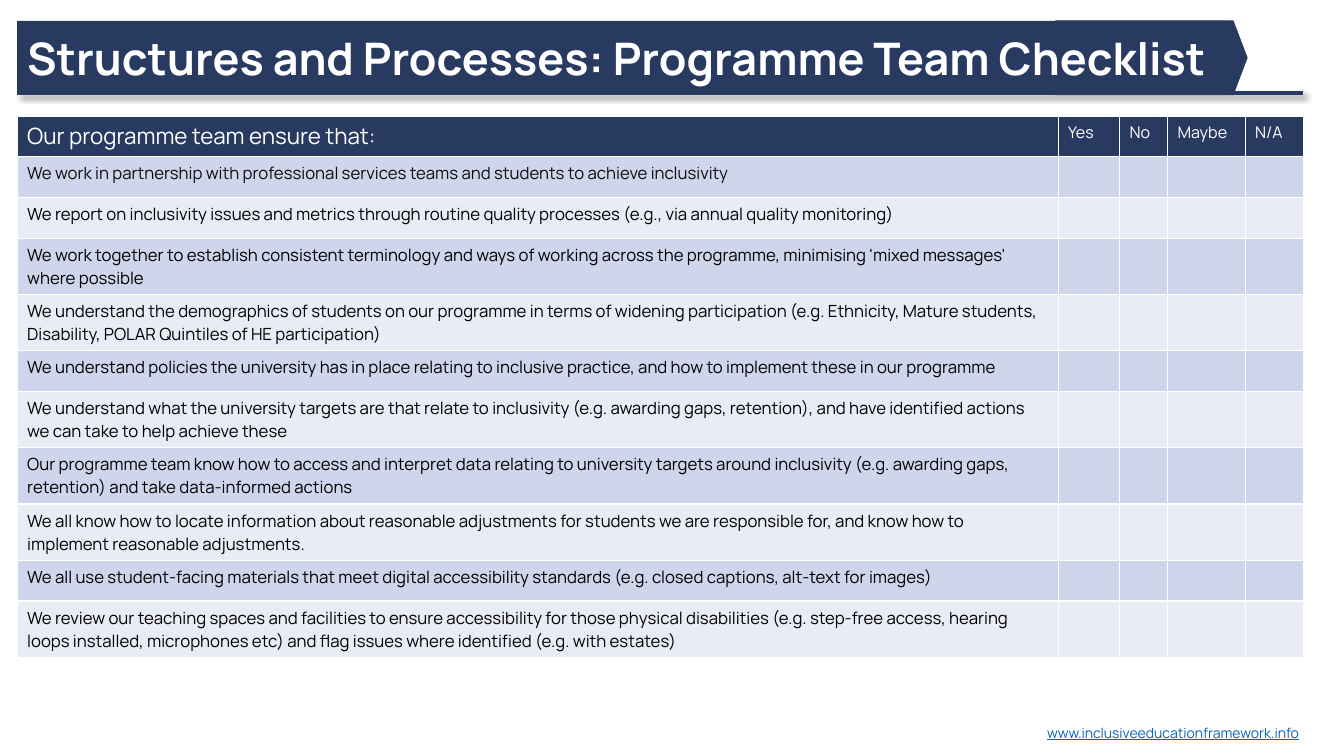
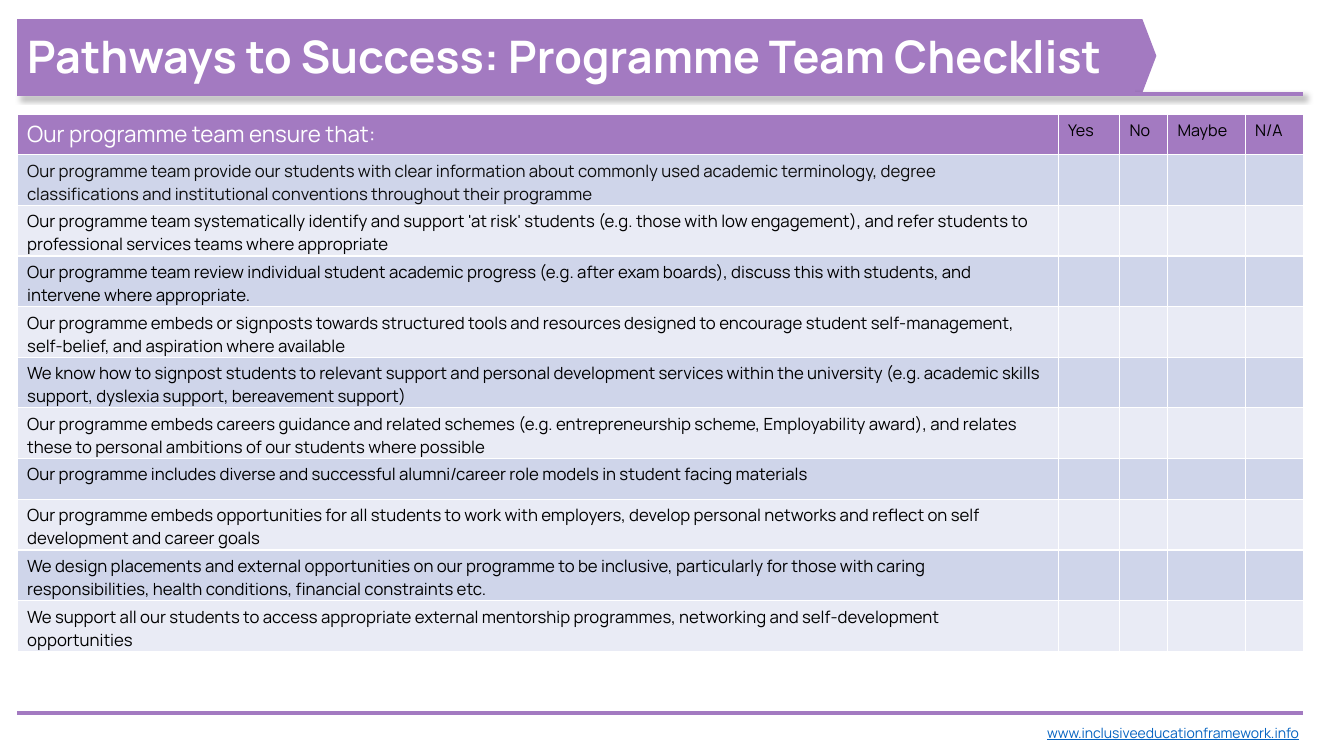
from dataclasses import dataclass

from lxml.etree import SubElement
from pptx import Presentation
from pptx.dml.color import RGBColor
from pptx.enum.shapes import MSO_CONNECTOR
from pptx.enum.text import MSO_ANCHOR, MSO_AUTO_SIZE, PP_ALIGN
from pptx.oxml.ns import qn
from pptx.slide import Slide
from pptx.util import Pt

NAVY = RGBColor(0x29, 0x3A, 0x60)
PURPLE = RGBColor(0xA3, 0x7A, 0xC1)
WHITE = RGBColor(0xFF, 0xFF, 0xFF)
BLACK = RGBColor(0x00, 0x00, 0x00)
NEAR_BLACK = RGBColor(0x0D, 0x0D, 0x0D)
LINK_BLUE = RGBColor(0x05, 0x63, 0xC1)
ROW_FILLS = (RGBColor(0xCF, 0xD5, 0xEA), RGBColor(0xE9, 0xEB, 0xF5))

FONT = "Manrope"
LEFT, RIGHT = 12.24, 930.94
BAND_HEIGHT = 52.6
COLUMN_WIDTHS = (743.6, 43.8, 34.4, 55.4, 41.5)
ROW_HEIGHT = 29.2
HEADINGS = ("Our programme team ensure that:", "Yes", "No", "Maybe", "N/A")
ADDRESS = "www.inclusiveeducationframework.info"


@dataclass(frozen=True)
class Checklist:
    title: str
    color: RGBColor
    answer_color: RGBColor
    band_top: float
    band_width: float
    band_line_y: float
    tip_outline: float
    table_top: float
    cell_margins: tuple[float, float]
    statements: tuple[str, ...]
    footer_line_y: float | None = None


CHECKLISTS = (
    Checklist(
        title="Structures and Processes: Programme Team Checklist",
        color=NAVY,
        answer_color=WHITE,
        band_top=15,
        band_width=863.3,
        band_line_y=66.4,
        tip_outline=0.75,
        table_top=82.8,
        cell_margins=(3.6, 3.6),
        statements=(
            "We work in partnership with professional services teams and students to achieve inclusivity",
            "We report on inclusivity issues and metrics through routine quality processes "
            "(e.g., via annual quality monitoring)",
            "We work together to establish consistent terminology and ways of working across the "
            "programme, minimising 'mixed messages' where possible",
            "We understand the demographics of students on our programme in terms of widening "
            "participation (e.g. Ethnicity, Mature students, Disability, POLAR Quintiles of HE participation)",
            "We understand policies the university has in place relating to inclusive practice, "
            "and how to implement these in our programme",
            "We understand what the university targets are that relate to inclusivity (e.g. awarding "
            "gaps, retention), and have identified actions we can take to help achieve these",
            "Our programme team know how to access and interpret data relating to university targets "
            "around inclusivity (e.g. awarding gaps, retention) and take data-informed actions",
            "We all know how to locate information about reasonable adjustments for students we are "
            "responsible for, and know how to implement reasonable adjustments.",
            "We all use student-facing materials that meet digital accessibility standards "
            "(e.g. closed captions, alt-text for images)",
            "We review our teaching spaces and facilities to ensure accessibility for those physical "
            "disabilities (e.g. step-free access, hearing loops installed, microphones etc) and flag "
            "issues where identified (e.g. with estates)",
        ),
    ),
    Checklist(
        title="Pathways to Success: Programme Team Checklist",
        color=PURPLE,
        answer_color=BLACK,
        band_top=13.6,
        band_width=798.5,
        band_line_y=67.1,
        tip_outline=0,
        table_top=81.4,
        cell_margins=(3.25, 0),
        footer_line_y=509.5,
        statements=(
            "Our programme team provide our students with clear information about commonly used academic "
            "terminology, degree classifications and institutional conventions throughout their programme",
            "Our programme team systematically identify and support 'at risk' students (e.g. those with "
            "low engagement), and refer students to professional services teams where appropriate",
            "Our programme team review individual student academic progress (e.g. after exam boards), "
            "discuss this with students, and intervene where appropriate.",
            "Our programme embeds or signposts towards structured tools and resources designed to "
            "encourage student self-management, self-belief, and aspiration where available",
            "We know how to signpost students to relevant support and personal development services within "
            "the university (e.g. academic skills support, dyslexia support, bereavement support)",
            "Our programme embeds careers guidance and related schemes (e.g. entrepreneurship scheme, "
            "Employability award), and relates these to personal ambitions of our students where possible",
            "Our programme includes diverse and successful alumni/career role models in student facing materials",
            "Our programme embeds opportunities for all students to work with employers, develop personal "
            "networks and reflect on self development and career goals",
            "We design placements and external opportunities on our programme to be inclusive, particularly "
            "for those with caring responsibilities, health conditions, financial constraints etc.",
            "We support all our students to access appropriate external mentorship programmes, networking "
            "and self-development opportunities",
        ),
    ),
)


def add_run(p, text: str, size: float, color: RGBColor, bold: bool = False, underline: bool = False) -> None:
    r = p.add_run()
    r.text = text
    font = r.font
    font.name, font.size, font.bold = FONT, Pt(size), bold
    font.color.rgb = color
    if underline:
        font.underline = True


def add_rule(s: Slide, y: float, color: RGBColor, shadow: bool = False) -> None:
    """Draw a full-width line, with a soft shadow below it if asked."""
    line = s.shapes.add_connector(MSO_CONNECTOR.STRAIGHT, Pt(LEFT), Pt(y), Pt(RIGHT), Pt(y))
    line.line.color.rgb = color
    line.line.width = Pt(3)
    effects = SubElement(line.element.spPr, qn("a:effectLst"))
    if shadow:
        outer = SubElement(effects, qn("a:outerShdw"), blurRad=str(Pt(4)), dist=str(Pt(3)),
                           dir="2700000", algn="tl", rotWithShape="0")
        tint = SubElement(outer, qn("a:srgbClr"), val=str(BLACK))
        SubElement(tint, qn("a:alpha"), val="40000")


def add_band_tip(s: Slide, c: Checklist) -> None:
    """Draw the pointed end that extends the title band."""
    end = LEFT + c.band_width
    left, shoulder, nose = end - 121.4, end + 5.3, end + 15.3
    top, bottom = c.band_top, c.band_top + BAND_HEIGHT
    outline = ((left, top), (left, bottom), (shoulder, bottom), (nose, (top + bottom) / 2))
    builder = s.shapes.build_freeform(Pt(shoulder), Pt(top))
    builder.add_line_segments([(Pt(x), Pt(y)) for x, y in outline], close=True)
    sp = builder.convert_to_shape()
    sp.shadow.inherit = False
    sp.fill.solid()
    sp.fill.fore_color.rgb = c.color
    if c.tip_outline:
        sp.line.color.rgb = c.color
        sp.line.width = Pt(c.tip_outline)
    else:
        sp.line.fill.background()


def format_title(s: Slide, c: Checklist) -> None:
    sp = s.shapes.title
    sp.left, sp.top = Pt(LEFT), Pt(c.band_top)
    sp.width, sp.height = Pt(c.band_width), Pt(BAND_HEIGHT)
    sp.fill.solid()
    sp.fill.fore_color.rgb = c.color
    tf = sp.text_frame
    tf.auto_size = MSO_AUTO_SIZE.NONE
    tf.vertical_anchor = MSO_ANCHOR.MIDDLE
    p = tf.paragraphs[0]
    p.alignment = PP_ALIGN.LEFT
    add_run(p, c.title, 32, WHITE, bold=True)
    s.shapes.element.append(sp.element)  # bring the band in front of the line's shadow


def add_checklist_table(s: Slide, c: Checklist) -> None:
    rows = len(c.statements) + 1
    table = s.shapes.add_table(rows, len(HEADINGS), Pt(LEFT), Pt(c.table_top),
                               Pt(sum(COLUMN_WIDTHS)), Pt(rows * ROW_HEIGHT)).table
    for column, width in zip(table.columns, COLUMN_WIDTHS):
        column.width = Pt(width)
    for i, row in enumerate(table.rows):
        row.height = Pt(ROW_HEIGHT)
        for cell in row.cells:
            cell.fill.solid()
            cell.fill.fore_color.rgb = ROW_FILLS[(i - 1) % 2] if i else c.color
    for j, heading in enumerate(HEADINGS):
        size, color = (11.5, c.answer_color) if j else (16, WHITE)
        add_run(table.cell(0, j).text_frame.paragraphs[0], heading, size, color)
    for i, statement in enumerate(c.statements, start=1):
        cell = table.cell(i, 0)
        cell.margin_top, cell.margin_bottom = map(Pt, c.cell_margins)
        add_run(cell.text_frame.paragraphs[0], statement, 12, NEAR_BLACK if i == 1 else BLACK)


def add_address(s: Slide) -> None:
    tf = s.shapes.add_textbox(Pt(740.9), Pt(514.1), Pt(201.6), Pt(19.4)).text_frame
    tf.word_wrap = True
    add_run(tf.paragraphs[0], ADDRESS, 10, LINK_BLUE, underline=True)


def add_checklist_slide(prs, c: Checklist) -> None:
    s = prs.slides.add_slide(prs.slide_layouts[5])
    add_checklist_table(s, c)
    add_band_tip(s, c)
    add_rule(s, c.band_line_y, c.color, shadow=True)
    if c.footer_line_y is not None:
        add_rule(s, c.footer_line_y, c.color)
    add_address(s)
    format_title(s, c)


def main() -> None:
    prs = Presentation()
    prs.slide_width, prs.slide_height = Pt(960), Pt(540)
    for checklist in CHECKLISTS:
        add_checklist_slide(prs, checklist)
    prs.save("out.pptx")


if __name__ == "__main__":
    main()
